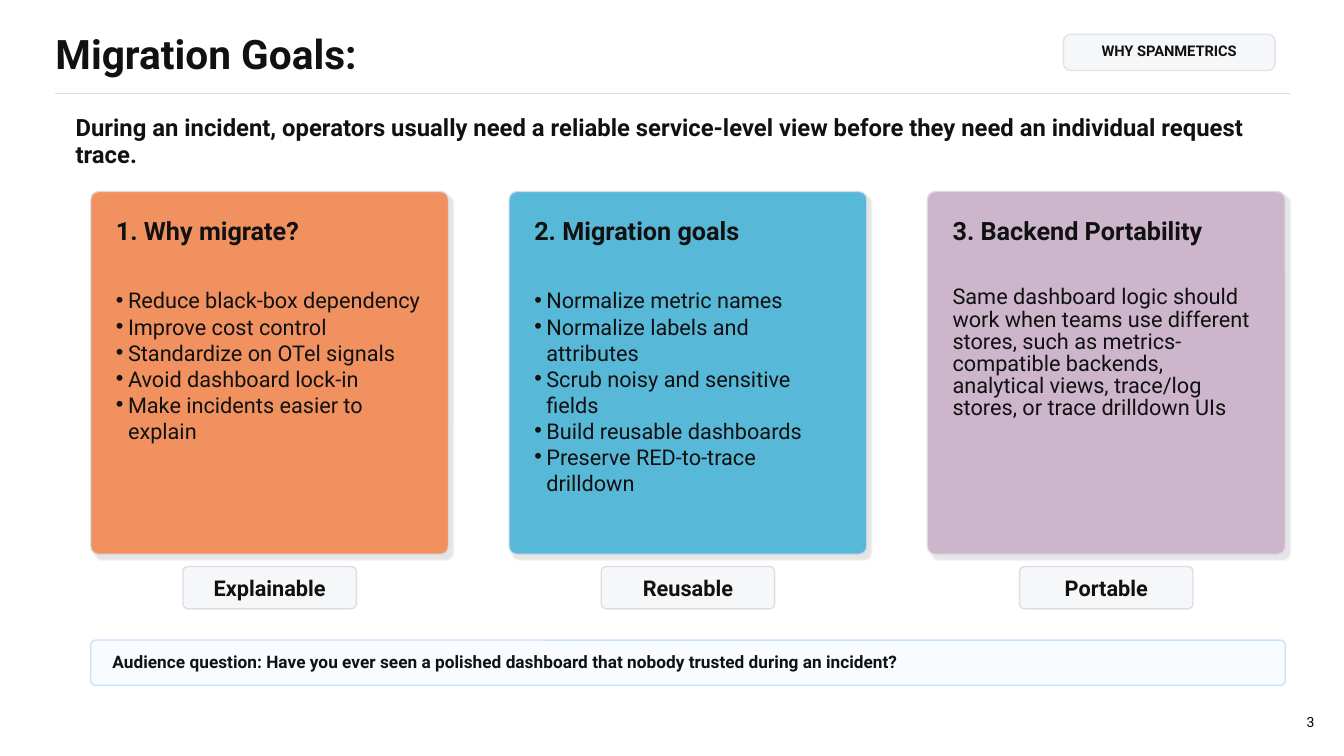
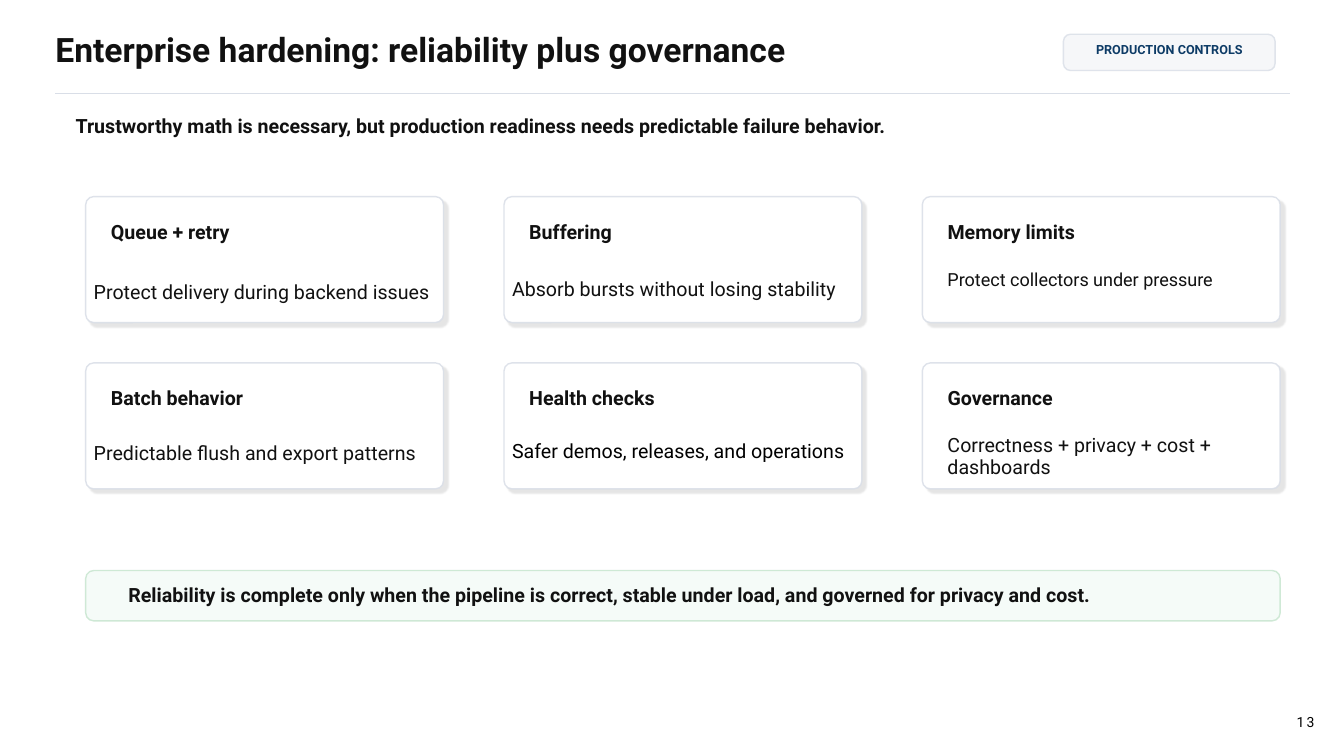
from dataclasses import dataclass

import pptx
import pptx.dml.color
import pptx.enum.shapes
import pptx.enum.text
import pptx.oxml.ns
import pptx.util
from lxml import etree

FONT = "Roboto"
COLORS = {
    "ink": "111111", "black": "000000", "navy": "0D3B66", "white": "FFFFFF",
    "chip": "F6F7F9", "rule": "D9DEE7",
    "orange": "F19160", "blue": "58B8D8", "mauve": "CDB5CC",
    "question": "F8FBFF", "question_edge": "C9E2FF",
    "verdict": "F5FBF8", "verdict_edge": "C8E6D0",
}
# The slide is a grid of square cells, ten to the inch.
COLUMNS, ROWS = 133.33, 75
CARD_WIDTH, CARD_PITCH = 35.5, 41.5
ALIGN = pptx.enum.text.PP_ALIGN
ANCHOR = pptx.enum.text.MSO_ANCHOR


def cells(count):
    return pptx.util.Inches(count / 10)


@dataclass
class Box:
    """A region of the grid, in columns and rows."""
    left: float
    top: float
    width: float
    height: float

    def region(self, column, row, width, height):
        return Box(self.left + column, self.top + row, width, height)

    def lengths(self):
        return [cells(n) for n in (self.left, self.top, self.width, self.height)]


SLIDE = Box(0, 0, COLUMNS, ROWS)


def rgb(name):
    return pptx.dml.color.RGBColor.from_string(COLORS[name])


def add_xml(parent, tag, **attributes):
    return etree.SubElement(parent, pptx.oxml.ns.qn(tag), attributes)


def write(shape, lines, size, color="ink", bold=False, spacing=0.92, align=ALIGN.LEFT,
          anchor=ANCHOR.TOP, margins=(0, 0, 0, 0), bullets=False):
    """Fill a shape with equally styled paragraphs; margins are left, top, right, bottom."""
    frame = shape.text_frame
    frame.word_wrap = True
    frame.auto_size = pptx.enum.text.MSO_AUTO_SIZE.NONE
    frame.vertical_anchor = anchor
    (frame.margin_left, frame.margin_top,
     frame.margin_right, frame.margin_bottom) = [cells(n) for n in margins]
    frame.text = "\n".join(lines)
    for para in frame.paragraphs:
        if bullets:
            properties = para._p.get_or_add_pPr()
            properties.set("marL", str(cells(1.2)))
            properties.set("indent", str(-cells(1.2)))
            add_xml(properties, "a:buChar", char="•")
        para.alignment = align
        para.line_spacing = spacing
        para.space_before = pptx.util.Pt(0)
        font = para.font
        font.name, font.size, font.bold = FONT, pptx.util.Pt(size), bold
        font.color.rgb = rgb(color)


def add_text(page, box, text, size, **style):
    shape = page.shapes.add_textbox(*box.lengths())
    write(shape, [text], size, **style)
    return shape


def fill_placeholder(shape, box, lines, size, **style):
    """Move a placeholder to the box, in front of what is already there."""
    shape.left, shape.top, shape.width, shape.height = box.lengths()
    shape.element.getparent().append(shape.element)
    write(shape, lines, size, **style)


def add_panel(page, box, fill, edge="rule", radius=0.5, edge_opacity=100, shadow=False):
    shape = page.shapes.add_shape(
        pptx.enum.shapes.MSO_SHAPE.ROUNDED_RECTANGLE, *box.lengths())
    shape.adjustments[0] = radius / box.height
    shape.fill.solid()
    shape.fill.fore_color.rgb = rgb(fill)
    shape.line.color.rgb = rgb(edge)
    shape.line.width = pptx.util.Pt(1)
    shape.shadow.inherit = False
    properties = shape.element.spPr
    if edge_opacity < 100:
        outline = properties.find(pptx.oxml.ns.qn("a:ln"))
        edge_color = next(outline.iter(pptx.oxml.ns.qn("a:srgbClr")))
        add_xml(edge_color, "a:alpha", val=str(edge_opacity * 1000))
    if shadow:
        effects = properties.find(pptx.oxml.ns.qn("a:effectLst"))
        outer = add_xml(effects, "a:outerShdw", blurRad=str(pptx.util.Pt(1)),
                        dist=str(pptx.util.Pt(4)), dir="2700000", algn="ctr",
                        rotWithShape="0")
        add_xml(add_xml(outer, "a:srgbClr", val=COLORS["black"]), "a:alpha", val="10000")
    return shape


def add_header(page, box, title, title_size, tag, tag_size, tag_color, lead, lead_size):
    """Title, tag, rule and lead sentence at the top of the box."""
    fill_placeholder(page.shapes.title, box.region(5.5, 3.3, 97, 4.5), [title],
                     title_size, bold=True)
    chip = add_panel(page, box.region(105.5, 3.4, 21, 3.6), "chip", radius=0.7,
                     edge_opacity=80)
    write(chip, [tag], tag_size, color=tag_color, bold=True, align=ALIGN.CENTER,
          margins=(1, 0.7, 1, 0))
    rule = box.region(5.5, 9.3, 122.5, 0)
    left, top, width, _ = rule.lengths()
    line = page.shapes.add_connector(
        pptx.enum.shapes.MSO_CONNECTOR.STRAIGHT, left, top, left + width, top)
    line.line.color.rgb = rgb("rule")
    line.line.width = pptx.util.Pt(1)
    add_xml(line.element.spPr, "a:effectLst")
    add_text(page, box.region(7.5, 11.5, 118, 3.4), lead, lead_size, bold=True)


def add_page_number(page, box, number):
    shape = add_text(page, box.region(127.2, 69.3, 3.2, 3.2), str(number), 10,
                     color="black", spacing=1.0, align=ALIGN.RIGHT, anchor=ANCHOR.BOTTOM)
    for defaults in shape.element.iter(pptx.oxml.ns.qn("a:defRPr")):
        defaults.set("spc", "150")


def add_card(page, box, fill, heading, heading_row, heading_size):
    add_panel(page, box, fill, radius=0.8, edge_opacity=85, shadow=True)
    add_text(page, box.region(2.5, heading_row, 30.5, 3), heading, heading_size, bold=True)


def add_band(page, box, text, size, fill, indent, **panel):
    band = add_panel(page, box, fill, edge=fill + "_edge", **panel)
    write(band, [text], size, bold=True, anchor=ANCHOR.MIDDLE, margins=(indent, 0, 2, 0))


def add_goal_column(page, box, fill, heading, lines, badge, placeholder):
    """A coloured card with a list or a paragraph, and a badge centred below it."""
    add_card(page, box, fill, heading, 2.7, 18)
    body = box.region(2.5, 9.5, 30.5, 17)
    if placeholder is not None:
        fill_placeholder(placeholder, body, lines, 15.5, spacing=1.0, bullets=True)
    else:
        add_text(page, body, lines[0], 15.5, spacing=0.85)
    badge_width = 17.2
    chip = add_panel(page, box.region((box.width - badge_width) / 2, box.height + 1.2,
                                      badge_width, 4.2), "chip")
    write(chip, [badge], 15.5, bold=True, spacing=1.0, align=ALIGN.CENTER,
          anchor=ANCHOR.MIDDLE, margins=(0.3, 0.5, 0.3, 0.5))


def build_goals(deck):
    page = deck.slides.add_slide(deck.slide_layouts.get_by_name("Two Content"))
    add_header(page, SLIDE, "Migration Goals:", 29, "WHY SPANMETRICS", 10.5, "ink",
               "During an incident, operators usually need a reliable service-level view "
               "before they need an individual request trace.", 17)
    _, first_list, second_list = list(page.placeholders)
    columns = [
        ("orange", "1. Why migrate?",
         ["Reduce black-box dependency", "Improve cost control",
          "Standardize on OTel signals", "Avoid dashboard lock-in",
          "Make incidents easier to explain"], "Explainable", first_list),
        ("blue", "2. Migration goals",
         ["Normalize metric names", "Normalize labels and attributes",
          "Scrub noisy and sensitive fields", "Build reusable dashboards",
          "Preserve RED-to-trace drilldown"], "Reusable", second_list),
        ("mauve", "3. Backend Portability",
         ["Same dashboard logic should work when teams use different stores, such as "
          "metrics-compatible backends, analytical views, trace/log stores, or trace "
          "drilldown UIs"], "Portable", None),
    ]
    area = SLIDE.region(9, 19, 118.5, 49)
    for index, column in enumerate(columns):
        add_goal_column(page, area.region(index * CARD_PITCH, 0, CARD_WIDTH, 36), *column)
    add_band(page, area.region(0, 44.5, area.width, 4.5),
             "Audience question: Have you ever seen a polished dashboard that nobody "
             "trusted during an incident?", 12.3, "question", 2)
    add_page_number(page, SLIDE, 3)


def build_hardening(deck):
    page = deck.slides.add_slide(deck.slide_layouts.get_by_name("Title Only"))
    add_header(page, SLIDE, "Enterprise hardening: reliability plus governance", 24,
               "PRODUCTION CONTROLS", 9, "navy",
               "Trustworthy math is necessary, but production readiness needs "
               "predictable failure behavior.", 14)
    # Heading, note, column and row of the note within its card, note style.
    controls = [
        ("Queue + retry", "Protect delivery during backend issues", 0.8, 8.5, {}),
        ("Buffering", "Absorb bursts without losing stability", 0.8, 8.2, {}),
        ("Memory limits", "Protect collectors under pressure", 2.5, 7.3, {"size": 12.9}),
        ("Batch behavior", "Predictable flush and export patterns", 0.8, 8, {}),
        ("Health checks", "Safer demos, releases, and operations", 0.8, 7.5,
         {"color": "black", "spacing": 1.0}),
        ("Governance", "Correctness + privacy + cost + dashboards", 2.5, 7.2, {}),
    ]
    area = SLIDE.region(8.5, 19.5, 118.5, 42.1)
    for index, (heading, note, column, row, style) in enumerate(controls):
        card_row, card_column = divmod(index, 3)
        card = area.region(card_column * CARD_PITCH, card_row * 16.5, CARD_WIDTH, 12.5)
        add_card(page, card, "white", heading, 2.5, 14)
        add_text(page, card.region(column, row, card.width - column, card.height - row),
                 note, **{"size": 14, **style})
    add_band(page, area.region(0, 37.1, area.width, 5),
             "Reliability is complete only when the pipeline is correct, stable under "
             "load, and governed for privacy and cost.", 14, "verdict", 4,
             radius=0.8, edge_opacity=85)
    add_page_number(page, SLIDE, 13)


def main():
    deck = pptx.Presentation()
    deck.slide_width, deck.slide_height = cells(COLUMNS), cells(ROWS)
    build_goals(deck)
    build_hardening(deck)
    deck.save("out.pptx")


if __name__ == "__main__":
    main()
